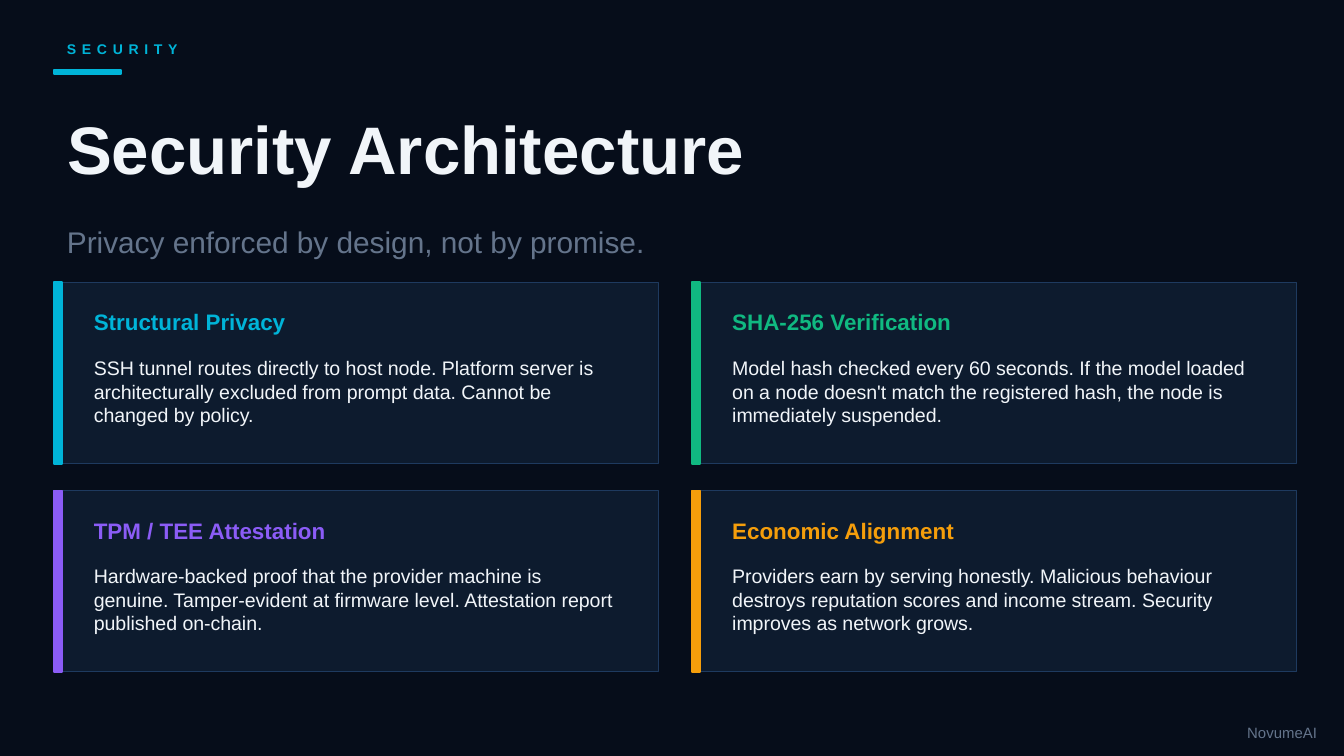
from dataclasses import dataclass
from pptx import Presentation
from pptx.dml.color import RGBColor as Rgb
from pptx.enum.shapes import MSO_SHAPE as Kind
from pptx.enum.text import MSO_ANCHOR as Anchor, MSO_AUTO_SIZE as Fit, PP_ALIGN as Align
from pptx.shapes.autoshape import Shape
from pptx.slide import Slide
from pptx.util import Inches, Pt


@dataclass(frozen=True)
class Theme:
    font: str = "Arial"
    back: str = "060D1A"
    panel: str = "0D1B2E"
    edge: str = "1E3A5F"
    light: str = "F1F5F9"
    muted: str = "64748B"
    cyan: str = "00B4D8"
    green: str = "10B981"
    violet: str = "8B5CF6"
    amber: str = "F59E0B"
    title: float = 36
    lead: float = 16
    head: float = 12
    body: float = 10.5
    foot: float = 8
    tag: float = 7.5


@dataclass(frozen=True)
class Box:
    left: float
    top: float
    width: float
    height: float


@dataclass(frozen=True)
class Card:
    head: str
    body: str
    color: str


THEME = Theme()
LEFT, TOP = 0.4, 2.1
WIDTH, HEIGHT = 4.5, 1.35
GAP_X, GAP_Y = 0.25, 0.2
COLS = 2

CARDS = [
    Card("Structural Privacy",
         "SSH tunnel routes directly to host node. Platform server is architecturally "
         "excluded from prompt data. Cannot be changed by policy.", THEME.cyan),
    Card("SHA-256 Verification",
         "Model hash checked every 60 seconds. If the model loaded on a node doesn't "
         "match the registered hash, the node is immediately suspended.", THEME.green),
    Card("TPM / TEE Attestation",
         "Hardware-backed proof that the provider machine is genuine. Tamper-evident at "
         "firmware level. Attestation report published on-chain.", THEME.violet),
    Card("Economic Alignment",
         "Providers earn by serving honestly. Malicious behaviour destroys reputation "
         "scores and income stream. Security improves as network grows.", THEME.amber),
]


def place(shape: Shape, box: Box) -> None:
    shape.left, shape.top = Inches(box.left), Inches(box.top)
    shape.width, shape.height = Inches(box.width), Inches(box.height)


def write(shape: Shape, text: str, size: float, color: str, bold: bool = False,
          align: Align = Align.LEFT, anchor: Anchor = Anchor.MIDDLE) -> None:
    frame = shape.text_frame
    frame.text = text
    frame.word_wrap = True
    frame.auto_size = Fit.NONE
    frame.vertical_anchor = anchor
    para = frame.paragraphs[0]
    para.alignment = align
    font = para.runs[0].font
    font.name, font.size, font.bold = THEME.font, Pt(size), bold
    font.color.rgb = Rgb.from_string(color)


def add_text(slide: Slide, box: Box, text: str, size: float, color: str,
             bold: bool = False, align: Align = Align.LEFT,
             anchor: Anchor = Anchor.MIDDLE) -> Shape:
    shape = slide.shapes.add_textbox(0, 0, 0, 0)
    place(shape, box)
    write(shape, text, size, color, bold, align, anchor)
    return shape


def add_rect(slide: Slide, box: Box, fill: str, line: str, weight: float = 1) -> None:
    shape = slide.shapes.add_shape(Kind.RECTANGLE, 0, 0, 0, 0)
    place(shape, box)
    shape.shadow.inherit = False
    shape.fill.solid()
    shape.fill.fore_color.rgb = Rgb.from_string(fill)
    shape.line.color.rgb = Rgb.from_string(line)
    shape.line.width = Pt(weight)


def add_card(slide: Slide, card: Card, left: float, top: float) -> None:
    add_rect(slide, Box(left, top, WIDTH, HEIGHT), THEME.panel, THEME.edge, 0.5)
    add_rect(slide, Box(left, top, 0.06, HEIGHT), card.color, card.color)
    add_text(slide, Box(left + 0.2, top + 0.12, WIDTH - 0.4, 0.35),
             card.head, THEME.head, card.color, bold=True)
    add_text(slide, Box(left + 0.2, top + 0.5, WIDTH - 0.4, 0.78),
             card.body, THEME.body, THEME.light, anchor=Anchor.TOP)


def main() -> None:
    deck = Presentation()
    deck.slide_width, deck.slide_height = Inches(10), Inches(10 * 9 / 16)
    slide = deck.slides.add_slide(deck.slide_layouts[5])
    slide.background.fill.solid()
    slide.background.fill.fore_color.rgb = Rgb.from_string(THEME.back)

    tag = add_text(slide, Box(LEFT, 0.25, 2.5, 0.22), "SECURITY",
                   THEME.tag, THEME.cyan, bold=True)
    tag.text_frame.paragraphs[0].runs[0].font._element.set("spc", "300")
    add_rect(slide, Box(LEFT, 0.52, 0.5, 0.03), THEME.cyan, THEME.cyan)

    title = slide.shapes.title
    place(title, Box(LEFT, 0.6, 9.2, 1))
    write(title, "Security Architecture", THEME.title, THEME.light, bold=True)
    add_text(slide, Box(LEFT, 1.55, 8.5, 0.5),
             "Privacy enforced by design, not by promise.", THEME.lead, THEME.muted)
    add_text(slide, Box(8.5, 5.3, 1.4, 0.3), "NovumeAI",
             THEME.foot, THEME.muted, align=Align.RIGHT)

    for i, card in enumerate(CARDS):
        row, col = divmod(i, COLS)
        add_card(slide, card, LEFT + col * (WIDTH + GAP_X), TOP + row * (HEIGHT + GAP_Y))

    deck.save("out.pptx")


if __name__ == "__main__":
    main()
